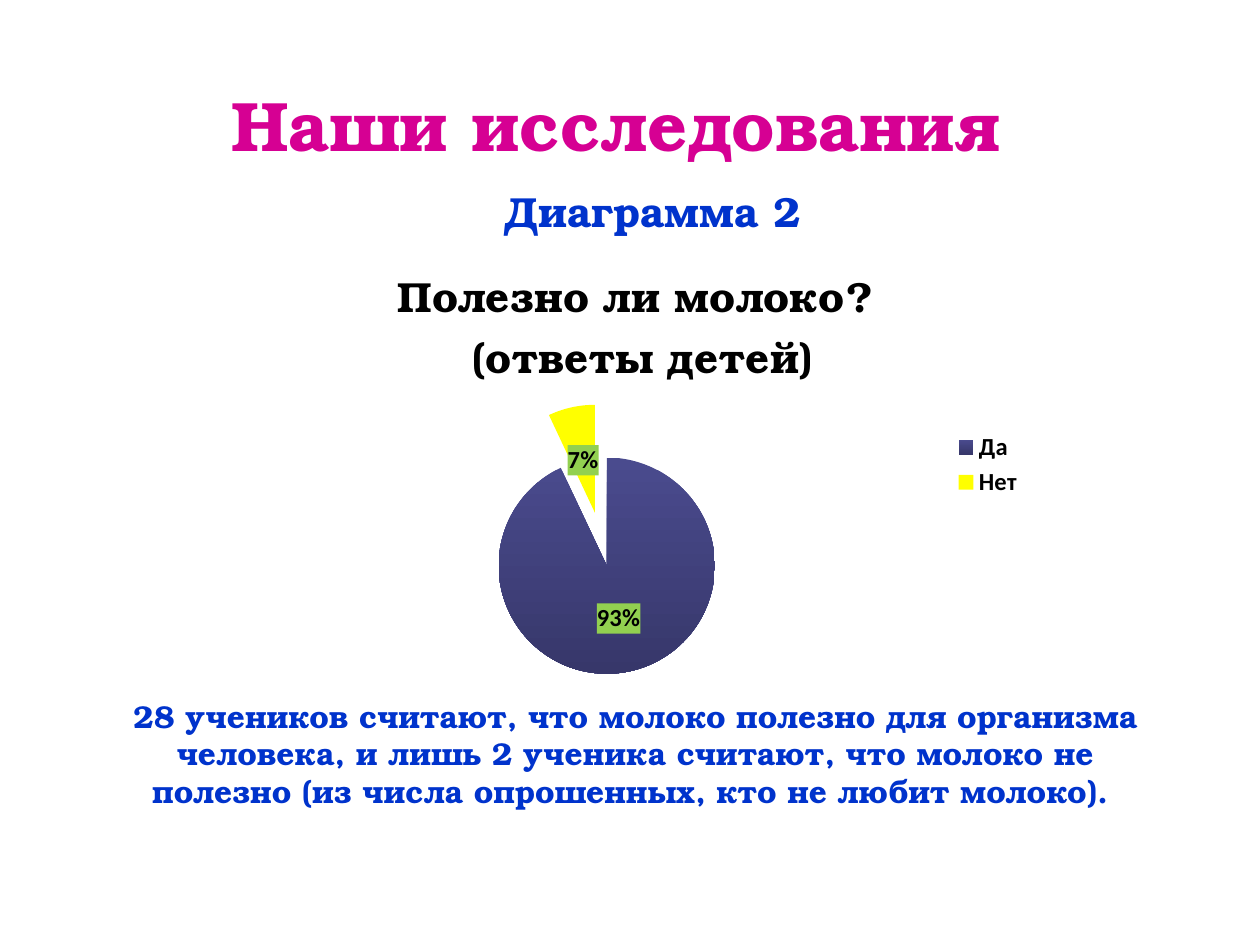
from lxml import etree
from pptx import Presentation
from pptx import util as u
from pptx.chart.data import CategoryChartData
from pptx.dml.color import RGBColor
from pptx.enum import chart as ch, text
from pptx.oxml import parse_xml
from pptx.oxml.ns import nsdecls, qn

FONT = "TeX Gyre Bonum"
HUES = {"pink": "D60093", "blue": "0033CC", "black": "000000", "top": "4A4B8E",
        "base": "37376A", "yellow": "FFFF00", "green": "92D050"}

# words, box, size, colour, wrap
TEXTS = [
    ("Наши исследования", (1.69, 0.6, 6.39, 0.77), 40, "pink", False),
    ("Диаграмма 2", (3.76, 1.42, 2.84, 0.5), 24, "blue", False),
    ("28 учеников считают, что молоко полезно для организма человека, "
     "и лишь 2 ученика считают, что молоко не полезно "
     "(из числа опрошенных, кто не любит молоко). ",
     (0.83, 5.48, 8.43, 1.01), 18, "blue", True),
]
TITLE = ["Полезно ли молоко? ", "(ответы детей)"]
ANSWERS = {"Да": 0.93, "Нет": 0.07}
CHART = (1.93, 1.86, 6.31, 3.64)


def rgb(name):
    return RGBColor.from_string(HUES[name])


def style(font, size, hue="black", face="Calibri"):
    font.size, font.bold, font.name = u.Pt(size), True, face
    font.color.rgb = rgb(hue)


def place(part, after, **spots):
    """Give a chart part a manual layout, as fractions of the chart."""
    for old in part.findall(qn("c:layout")):
        part.remove(old)
    inner = '<c:layoutTarget val="inner"/>' if "w" in spots else ""
    modes = "".join(f'<c:{k}Mode val="edge"/>' for k in "xy")
    sizes = "".join(f'<c:{k} val="{v}"/>' for k, v in spots.items())
    node = parse_xml(f'<c:layout {nsdecls("c")}><c:manualLayout>{inner}{modes}{sizes}'
                     '</c:manualLayout></c:layout>')
    if after is None:
        part.insert(0, node)
    else:
        part.find(qn(after)).addnext(node)


def add_text(slide, words, box, size, hue, wrap):
    frame = slide.shapes.add_textbox(*map(u.Inches, box)).text_frame
    frame.word_wrap = wrap
    para = frame.paragraphs[0]
    para.alignment = text.PP_ALIGN.CENTER
    run = para.add_run()
    run.text = words
    style(run.font, size, hue, FONT)


def add_pie(slide):
    data = CategoryChartData(number_format="0%")
    data.categories = list(ANSWERS)
    data.add_series("Series 1", list(ANSWERS.values()))
    pie = slide.shapes.add_chart(ch.XL_CHART_TYPE.PIE, *map(u.Inches, CHART), data).chart
    pie.font.name, pie.font.size = "Calibri", u.Pt(10)

    frame = pie.chart_title.text_frame
    for i, words in enumerate(TITLE):
        para = frame.paragraphs[0] if i == 0 else frame.add_paragraph()
        run = para.add_run()
        run.text = words
        style(run.font, 24, face=FONT)
    pie.chart_title.include_in_layout = False
    place(pie.chart_title._element, "c:tx", x=0.19, y=0.05)

    pie.has_legend = True
    pie.legend.position = ch.XL_LEGEND_POSITION.RIGHT
    pie.legend.include_in_layout = False
    style(pie.legend.font, 14)
    place(pie.legend._element, "c:legendPos", x=0.89, y=0.42)

    plot = pie.plots[0]
    plot.vary_by_categories = True
    place(pie._chartSpace.chart.plotArea, None, x=0.28, y=0.37, w=0.34, h=0.59)

    series = plot.series[0]
    yes, no = (series.points[i].format.fill for i in range(2))
    yes.gradient()
    yes.gradient_angle = 270
    for stop, hue in zip(yes.gradient_stops, ("top", "base")):
        stop.color.rgb = rgb(hue)
    no.solid()
    no.fore_color.rgb = rgb("yellow")
    burst = etree.Element(qn("c:explosion"), val="25")
    series._element.find(qn("c:dPt")).addprevious(burst)

    labels = series.data_labels
    labels.show_value = True
    labels.number_format, labels.number_format_is_linked = "0%", False
    labels.position = ch.XL_LABEL_POSITION.CENTER
    style(labels.font, 14)
    labels._element.find(qn("c:numFmt")).addnext(parse_xml(
        f'<c:spPr {nsdecls("c", "a")}><a:solidFill><a:srgbClr val="{HUES["green"]}"/>'
        '</a:solidFill></c:spPr>'))


def main():
    deck = Presentation()
    deck.slide_width, deck.slide_height = u.Inches(10), u.Inches(7.5)
    slide = deck.slides.add_slide(deck.slide_layouts[6])
    add_pie(slide)
    for item in TEXTS:
        add_text(slide, *item)
    deck.save("out.pptx")


if __name__ == "__main__":
    main()
